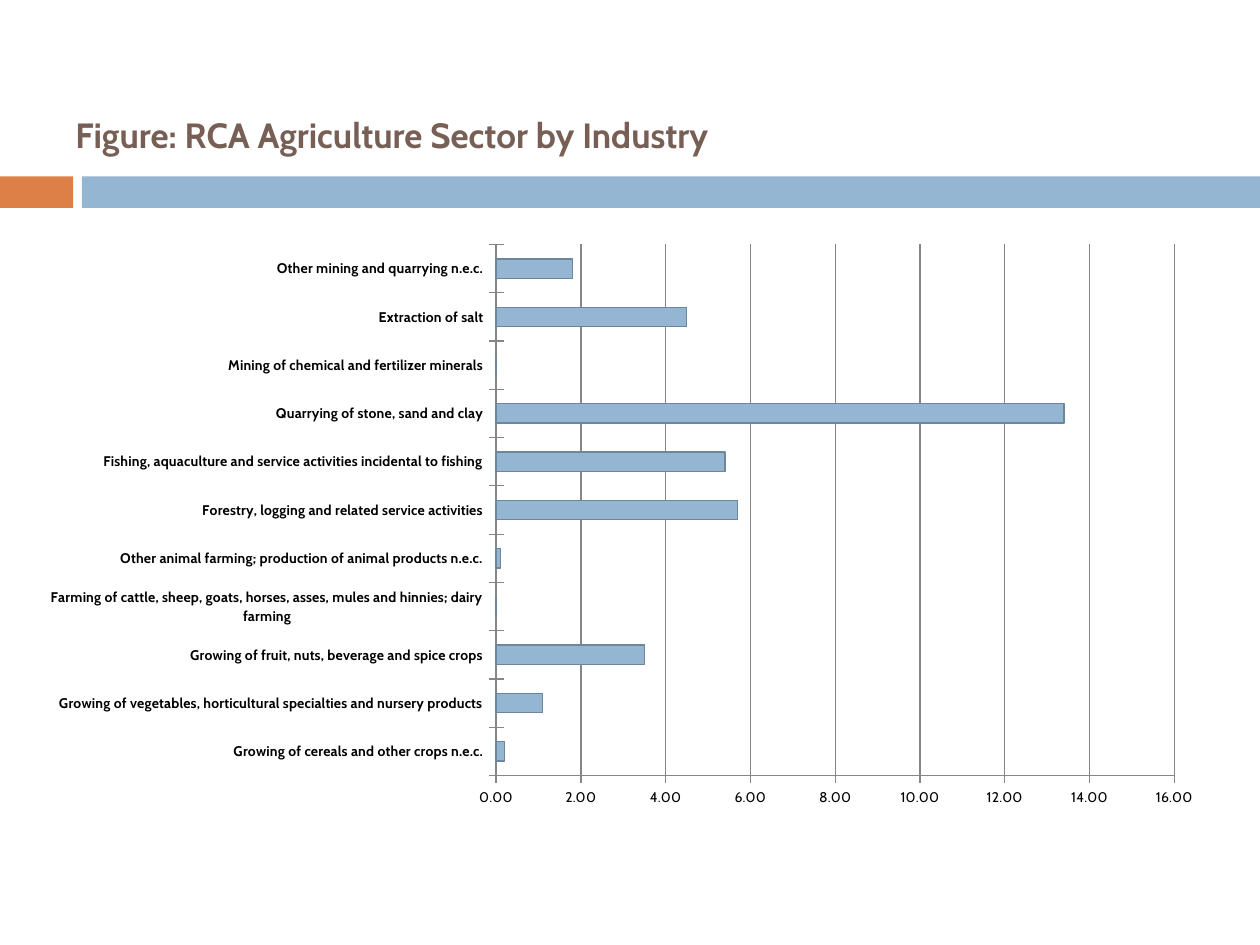
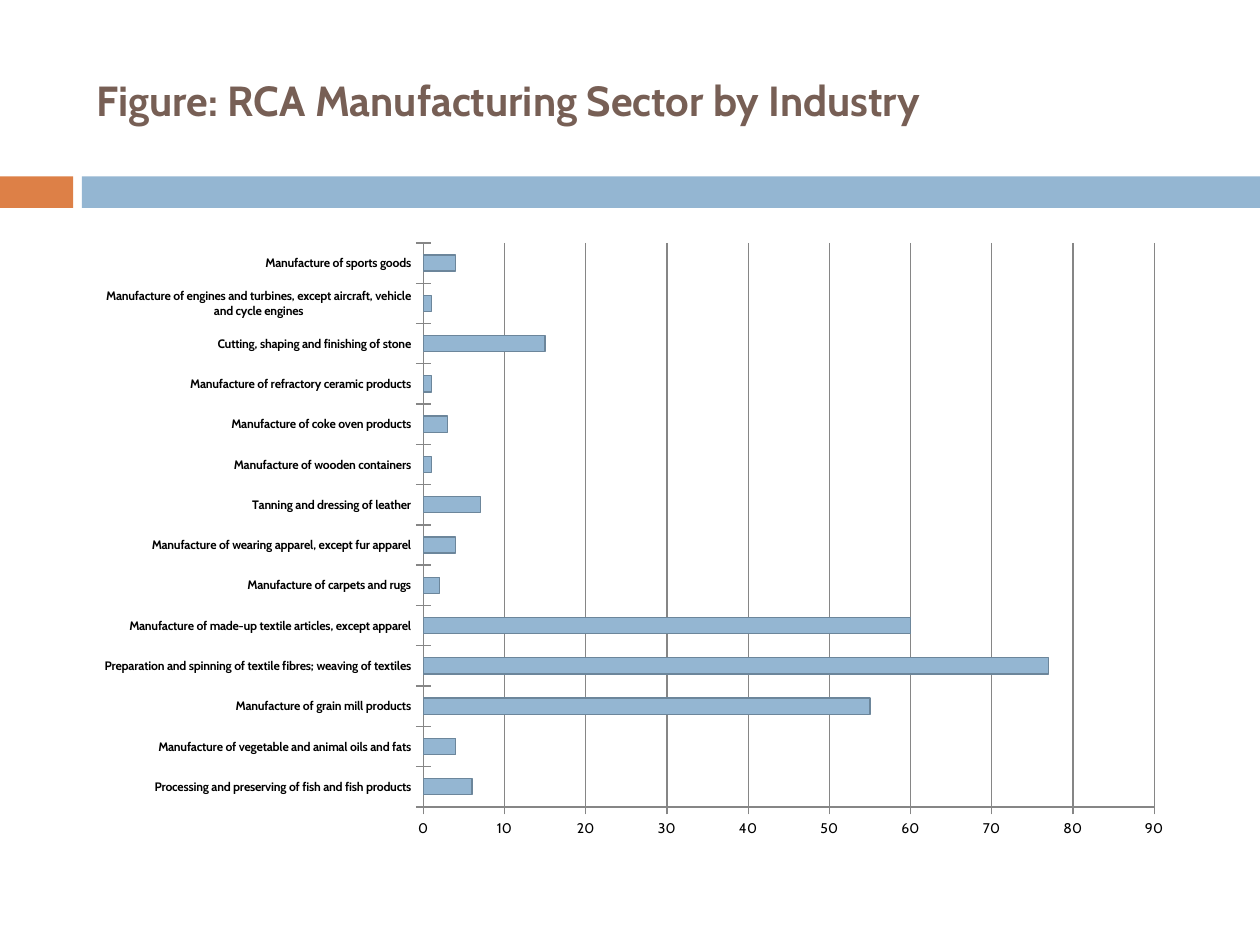
import pptx
import pptx.chart.data
import pptx.dml.color
import pptx.enum.chart
import pptx.enum.shapes
import pptx.enum.text
import pptx.oxml
import pptx.oxml.ns
import pptx.util

Inches = pptx.util.Inches
Pt = pptx.util.Pt
RGBColor = pptx.dml.color.RGBColor
ChartType = pptx.enum.chart.XL_CHART_TYPE

FONT = "Cabin"
BLUE = RGBColor(0x94, 0xB6, 0xD2)
BAR_EDGE = RGBColor(0x6C, 0x86, 0x9B)
ORANGE = RGBColor(0xDD, 0x80, 0x47)
BROWN = RGBColor(0x77, 0x5F, 0x55)
GREY = RGBColor(0x86, 0x86, 0x86)
BLACK = RGBColor(0, 0, 0)

SLIDE_WIDTH, SLIDE_HEIGHT = 10, 7.5
BAND_BOX = (0, 1.4, SLIDE_WIDTH, 0.25)
ACCENT_WIDTH, BAND_GAP = 0.58, 0.07

AGRICULTURE = [
    ("Growing of cereals and other crops n.e.c.", 0.2),
    ("Growing of vegetables, horticultural specialties and nursery products", 1.1),
    ("Growing of fruit, nuts, beverage and spice crops", 3.5),
    ("Farming of cattle, sheep, goats, horses, asses, mules and hinnies; dairy farming", 0),
    ("Other animal farming; production of animal products n.e.c.", 0.1),
    ("Forestry, logging and related service activities", 5.7),
    ("Fishing, aquaculture and service activities incidental to fishing", 5.4),
    ("Quarrying of stone, sand and clay", 13.4),
    ("Mining of chemical and fertilizer minerals", 0),
    ("Extraction of salt", 4.5),
    ("Other mining and quarrying n.e.c.", 1.8),
]
MANUFACTURING = [
    ("Processing and preserving of fish and fish products", 6),
    ("Manufacture of vegetable and animal oils and fats", 4),
    ("Manufacture of grain mill products", 55),
    ("Preparation and spinning of textile fibres; weaving of textiles", 77),
    ("Manufacture of made-up textile articles, except apparel", 60),
    ("Manufacture of carpets and rugs", 2),
    ("Manufacture of wearing apparel, except fur apparel", 4),
    ("Tanning and dressing of leather", 7),
    ("Manufacture of wooden containers", 1),
    ("Manufacture of coke oven products", 3),
    ("Manufacture of refractory ceramic products", 1),
    ("Cutting, shaping and finishing of stone", 15),
    ("Manufacture of engines and turbines, except aircraft, vehicle and cycle engines", 1),
    ("Manufacture of sports goods", 4),
]


def style_font(font, size, color, bold=False):
    font.name, font.size, font.bold = FONT, Pt(size), bold
    font.color.rgb = color


def style_line(line, color):
    line.color.rgb = color
    line.width = Pt(0.75)


def add_band(slide, box):
    """Orange accent at the left, blue band over the rest of the box."""
    left, top, width, height = box
    band_offset = ACCENT_WIDTH + BAND_GAP
    for x, part_width, color in (
        (left, ACCENT_WIDTH, ORANGE),
        (left + band_offset, width - band_offset, BLUE),
    ):
        part = slide.shapes.add_shape(
            pptx.enum.shapes.MSO_SHAPE.RECTANGLE,
            Inches(x), Inches(top), Inches(part_width), Inches(height))
        part.shadow.inherit = False
        part.fill.solid()
        part.fill.fore_color.rgb = color
        part.line.fill.background()


def add_title(slide, box, wording, size):
    title = slide.shapes.add_textbox(*map(Inches, box))
    frame = title.text_frame
    frame.word_wrap = True
    frame.vertical_anchor = pptx.enum.text.MSO_ANCHOR.MIDDLE
    frame.text = wording
    style_font(frame.paragraphs[0].runs[0].font, size, BROWN, bold=True)


def set_plot_layout(chart, plot_box):
    """Fix the inner plot area; plot_box holds fractions of the chart."""
    plot_area = chart.element.find(".//" + pptx.oxml.ns.qn("c:plotArea"))
    for layout in plot_area.findall(pptx.oxml.ns.qn("c:layout")):
        plot_area.remove(layout)
    settings = [("layoutTarget", "inner"), ("xMode", "edge"), ("yMode", "edge")]
    settings += zip("xywh", plot_box)
    children = "".join(f'<c:{tag} val="{value}"/>' for tag, value in settings)
    plot_area.insert(0, pptx.oxml.parse_xml(
        f'<c:layout {pptx.oxml.ns.nsdecls("c")}>'
        f"<c:manualLayout>{children}</c:manualLayout></c:layout>"))


def add_rca_chart(slide, box, industries, chart_type, plot_box,
                  label_size, maximum, step, number_format):
    data = pptx.chart.data.CategoryChartData()
    data.categories = [industry for industry, _ in industries]
    data.add_series("Series 1", [rca for _, rca in industries])
    chart = slide.shapes.add_chart(chart_type, *map(Inches, box), data).chart
    chart.has_legend = chart.has_title = False
    style_font(chart.font, 10, BLACK)
    set_plot_layout(chart, plot_box)

    plot = chart.plots[0]
    plot.vary_by_categories = False
    plot.gap_width = 150
    if chart_type == ChartType.BAR_STACKED:
        plot.overlap = 100
    bars = plot.series[0].format
    bars.fill.solid()
    bars.fill.fore_color.rgb = BLUE
    style_line(bars.line, BAR_EDGE)

    for axis, size, bold in ((chart.category_axis, label_size, True),
                             (chart.value_axis, 8, False)):
        axis.major_tick_mark = pptx.enum.chart.XL_TICK_MARK.CROSS
        axis.minor_tick_mark = pptx.enum.chart.XL_TICK_MARK.NONE
        style_line(axis.format.line, GREY)
        style_font(axis.tick_labels.font, size, BLACK, bold)

    scale = chart.value_axis
    scale.minimum_scale, scale.maximum_scale, scale.major_unit = 0, maximum, step
    scale.has_major_gridlines = True
    style_line(scale.major_gridlines.format.line, GREY)
    scale.tick_labels.number_format = number_format
    scale.tick_labels.number_format_is_linked = False


def add_figure_slide(deck, sector, title_box, title_size, chart_box, **chart_options):
    slide = deck.slides.add_slide(deck.slide_layouts[6])
    add_band(slide, BAND_BOX)
    add_title(slide, title_box, f"Figure: RCA {sector} Sector by Industry", title_size)
    add_rca_chart(slide, chart_box, **chart_options)


def main():
    deck = pptx.Presentation()
    deck.slide_width, deck.slide_height = Inches(SLIDE_WIDTH), Inches(SLIDE_HEIGHT)
    add_figure_slide(
        deck, "Agriculture", (0.5, 0.58, 9, 0.97), 20, (0.33, 1.92, 9.25, 5.25),
        industries=AGRICULTURE, chart_type=ChartType.BAR_CLUSTERED,
        plot_box=(0.39, 0.004, 0.582, 0.803),
        label_size=8, maximum=16, step=2, number_format="0.00")
    add_figure_slide(
        deck, "Manufacturing", (0.67, 0.25, 8.92, 1.08), 24, (0.83, 1.83, 8.58, 4.92),
        industries=MANUFACTURING, chart_type=ChartType.BAR_STACKED,
        plot_box=(0.294, 0.02, 0.677, 0.91),
        label_size=7, maximum=90, step=10, number_format="0")
    deck.save("out.pptx")


if __name__ == "__main__":
    main()
